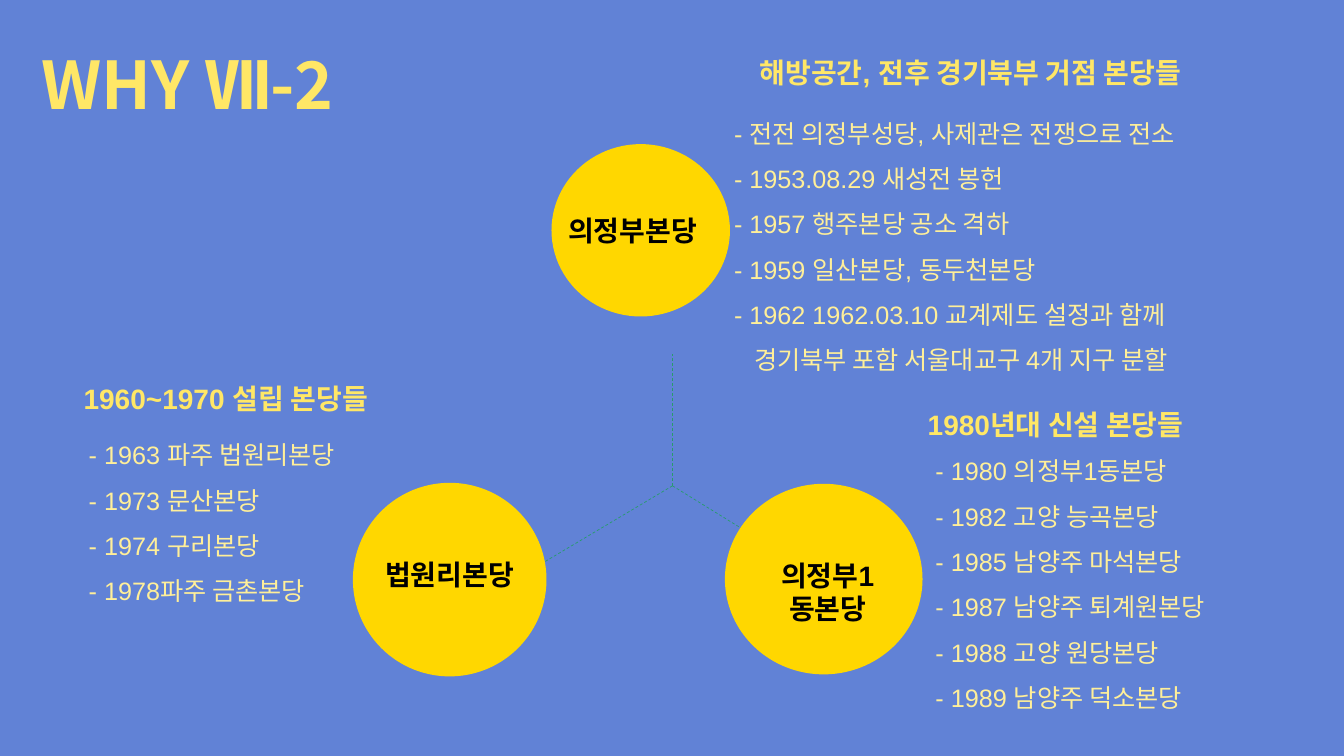
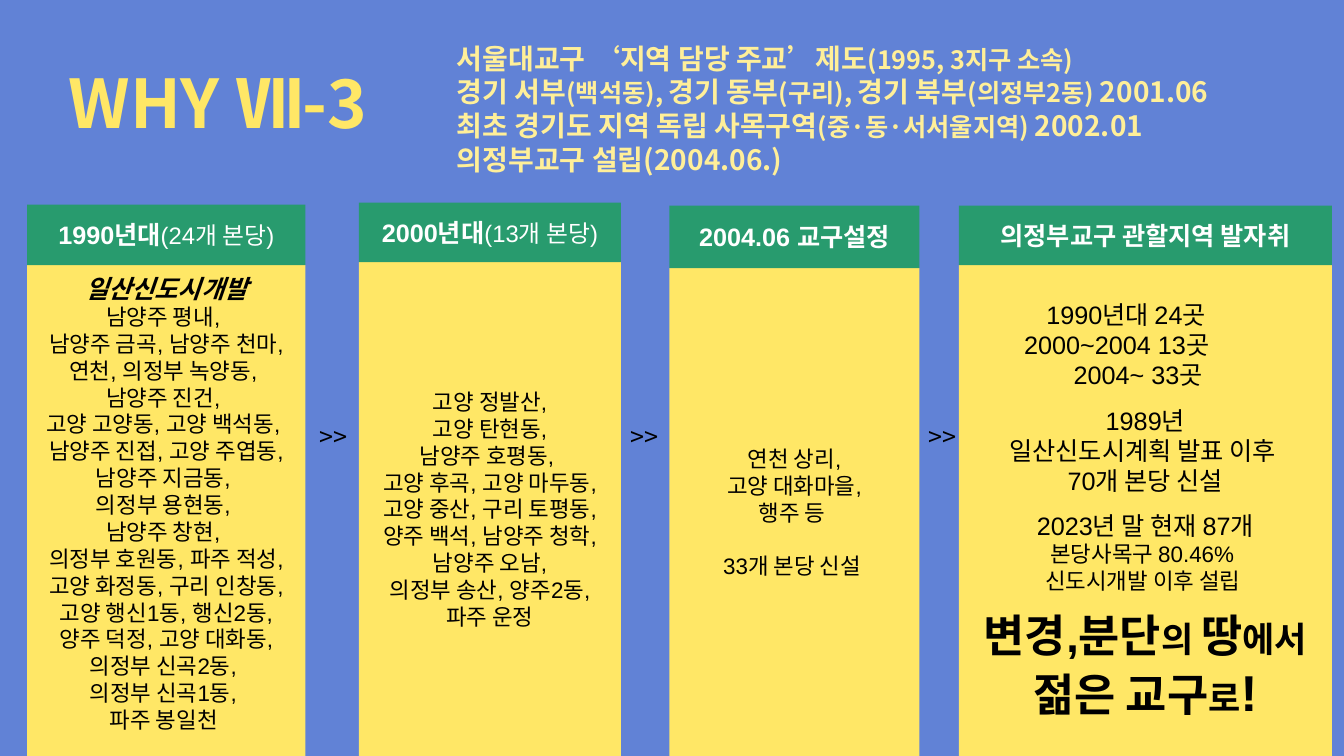
from dataclasses import dataclass
from typing import NamedTuple

from lxml.etree import SubElement
from pptx import Presentation
from pptx.dml.color import RGBColor
from pptx.enum.dml import MSO_LINE
from pptx.enum.shapes import MSO_CONNECTOR, MSO_SHAPE
from pptx.enum.text import MSO_ANCHOR, MSO_AUTO_SIZE, PP_ALIGN
from pptx.oxml.ns import qn
from pptx.util import Inches, Pt

BLUE = RGBColor(0x61, 0x82, 0xD6)
GREEN = RGBColor(0x28, 0x9B, 0x6E)
GOLD = RGBColor(0xFF, 0xD7, 0x00)
YELLOW = RGBColor(0xFF, 0xE7, 0x66)
CREAM = RGBColor(0xFF, 0xEF, 0x99)
BLACK = RGBColor(0, 0, 0)
WHITE = RGBColor(0xFF, 0xFF, 0xFF)
LATIN = "Arial"
KOREAN = "Noto Sans CJK KR"
SLIDE_HEIGHT = 7.5
COMPARISON_LAYOUT = 4
CONTENT_LAYOUT = 1


class Box(NamedTuple):
    left: float
    top: float
    width: float
    height: float

    def lengths(self) -> list:
        return [Inches(value) for value in self]


class Run(NamedTuple):
    text: str
    size: float
    bold: bool = False
    color: RGBColor = BLACK
    font: str = LATIN
    italic: bool = False


@dataclass
class Line:
    runs: list
    align: PP_ALIGN = PP_ALIGN.CENTER
    spacing: float = 1.0
    before: float = 0
    indent: float = 0


@dataclass
class ParishGroup:
    heading: str
    heading_box: Box
    entries: list
    list_box: Box
    first_spacing: float = 1.5
    continuation: str = ""


@dataclass
class ParishCircle:
    box: Box
    label_box: Box
    label: list


@dataclass
class Era:
    left: float
    top: float
    width: float
    band: float
    header: list
    lines: list
    bottom_inset: float = 0.05


def fill_text(shape, lines: list, anchor=MSO_ANCHOR.TOP, bottom: float = 0.05) -> None:
    frame = shape.text_frame
    frame.word_wrap = True
    frame.auto_size = MSO_AUTO_SIZE.NONE
    frame.vertical_anchor = anchor
    frame.margin_left = frame.margin_right = Inches(0.1)
    frame.margin_top, frame.margin_bottom = Inches(0.05), Inches(bottom)
    for index, line in enumerate(lines):
        paragraph = frame.add_paragraph() if index else frame.paragraphs[0]
        paragraph.alignment = line.align
        paragraph.line_spacing = line.spacing
        paragraph.space_before = Pt(line.before)
        paragraph.space_after = Pt(0)
        properties = paragraph._p.get_or_add_pPr()
        properties.set("marL", str(Inches(line.indent)))
        properties.set("indent", "0")
        SubElement(properties, qn("a:buNone"))
        for part in line.runs:
            run = paragraph.add_run()
            run.text = part.text
            font = run.font
            font.size, font.bold, font.italic = Pt(part.size), part.bold, part.italic
            font.color.rgb = part.color
            font.name = part.font
            SubElement(run._r.get_or_add_rPr(), qn("a:ea"), typeface=KOREAN)


def place(shape, box: Box):
    shape.left, shape.top, shape.width, shape.height = box.lengths()
    return shape


def add_text(slide, box: Box, lines: list) -> None:
    fill_text(slide.shapes.add_textbox(*box.lengths()), lines)


def add_block(slide, kind: MSO_SHAPE, box: Box, color: RGBColor):
    block = slide.shapes.add_shape(kind, *box.lengths())
    block.shadow.inherit = False
    block.fill.solid()
    block.fill.fore_color.rgb = color
    block.line.fill.background()
    return block


def add_branch(slide, start: tuple, end: tuple) -> None:
    branch = slide.shapes.add_connector(
        MSO_CONNECTOR.STRAIGHT, *[Inches(value) for value in (*start, *end)])
    branch.line.color.rgb = GREEN
    branch.line.width = Pt(0.5)
    branch.line.dash_style = MSO_LINE.DASH
    SubElement(branch._element.spPr, qn("a:effectLst"))


def start_slide(deck, layout: int, title: str, box: Box, size: float):
    slide = deck.slides.add_slide(deck.slide_layouts[layout])
    slide.background.fill.solid()
    slide.background.fill.fore_color.rgb = BLUE
    fill_text(place(slide.shapes.title, box),
              [Line([Run(title, size, True, YELLOW, KOREAN)], PP_ALIGN.LEFT)])
    return slide


def centered(texts: list, size: float, **style) -> list:
    return [Line([Run(text, size, **style)]) for text in texts]


def group_lines(group: ParishGroup) -> list:
    lines = [Line([Run(entry, 18, color=CREAM)], PP_ALIGN.JUSTIFY, 1.5)
             for entry in group.entries]
    lines[0].spacing = group.first_spacing
    if group.continuation:
        lines.append(Line([Run(group.continuation, 18, color=CREAM)],
                          PP_ALIGN.JUSTIFY, 1.5, indent=0.2))
    return lines


GROUPS = [
    ParishGroup(
        "해방공간, 전후 경기북부 거점 본당들", Box(7.18, 0.5, 4.89, 0.44),
        ["- 전전 의정부성당, 사제관은 전쟁으로 전소", "- 1953.08.29 새성전 봉헌",
         "- 1957 행주본당 공소 격하", "- 1959 일산본당, 동두천본당",
         "- 1962 1962.03.10 교계제도 설정과 함께"],
        Box(7.18, 0.97, 5, 2.77), continuation="경기북부 포함 서울대교구 4개 지구 분할"),
    ParishGroup(
        "1960~1970 설립 본당들", Box(0.63, 3.73, 3.22, 0.44),
        ["- 1963 파주 법원리본당", "- 1973 문산본당", "- 1974 구리본당",
         "- 1978파주 금촌본당"],
        Box(0.78, 4.16, 3.38, 3.23)),
    ParishGroup(
        "1980년대 신설 본당들", Box(8.66, 3.99, 3.62, 0.44),
        ["- 1980 의정부1동본당", "- 1982 고양 능곡본당", "- 1985 남양주 마석본당",
         "- 1987 남양주 퇴계원본당", "- 1988 고양 원당본당", "- 1989 남양주 덕소본당"],
        Box(9.18, 4.47, 3.05, 2.62), first_spacing=1.0),
]

CIRCLES = [
    ParishCircle(Box(3.5, 4.79, 1.92, 1.92), Box(3.57, 5.48, 1.78, 0.43), ["법원리본당"]),
    ParishCircle(Box(5.47, 1.43, 1.77, 1.71), Box(5.35, 2.07, 1.85, 0.43), ["의정부본당"]),
    ParishCircle(Box(7.19, 4.8, 1.96, 1.89), Box(7.21, 5.49, 2, 0.76), ["의정부1", "동본당"]),
]

HUB = (6.67, 4.82)
BRANCH_ENDS = [(6.67, 3.51), (5.24, 5.67), (7.87, 5.56)]

MILESTONES = [
    [("서울대교구 ‘지역 담당 주교’제도", 20), ("(1995, 3지구 소속)", 18)],
    [("경기 서부", 20), ("(백석동), ", 18), ("경기 동부", 20), ("(구리), ", 18),
     ("경기 북부", 20), ("(의정부2동) ", 18), ("2001.06", 20)],
    [("최초 경기도 지역 독립 사목구역", 20), ("(중·동·서서울지역) ", 18), ("2002.01", 20)],
    [("의정부교구 설립(2004.06.)", 20)],
]

ERAS = [
    Era(0.27, 2.03, 2.76, 0.6,
        [Run("1990년대", 18, True, WHITE), Run("(24개 본당)", 17, False, WHITE)],
        [Line([Run("일산신도시개발", 18, True, italic=True)], spacing=1.5)]
        + centered(["남양주 평내, ", "남양주 금곡, 남양주 천마, 연천, 의정부 녹양동, ",
                    "남양주 진건, ", "고양 고양동, 고양 백석동, ",
                    "남양주 진접, 고양 주엽동,남양주 지금동, ", "의정부 용현동, ",
                    "남양주 창현, ",
                    "의정부 호원동, 파주 적성, 고양 화정동, 구리 인창동, 고양 행신1동, "
                    "행신2동, 양주 덕정, 고양 대화동, 의정부 신곡2동, ",
                    "의정부 신곡1동, ", "파주 봉일천 "], 16),
        bottom_inset=0.35),
    Era(3.56, 2.01, 2.6, 0.59,
        [Run("2000년대", 18, True, WHITE), Run("(13개 본당)", 17, False, WHITE)],
        centered(["고양 정발산,", "고양 탄현동,", "남양주 호평동, ",
                  "고양 후곡, 고양 마두동, 고양 중산, 구리 토평동, 양주 백석, "
                  "남양주 청학, 남양주 오남,",
                  "의정부 송산, 양주2동,", "파주 운정"], 16)),
    Era(6.64, 2.04, 2.48, 0.62, [Run("2004.06 교구설정", 18, True, WHITE)],
        centered(["연천 상리,", "고양 대화마을,", "행주 등 "], 16)
        + [Line([Run("33개 본당 신설 ", 16)], before=19)]),
    Era(9.51, 2.04, 3.7, 0.59, [Run("의정부교구 관할지역 발자취", 18, True, WHITE)],
        [Line([Run(text, 18)], PP_ALIGN.LEFT, indent=indent) for text, indent in
         [("1990년대 24곳", 0.77), ("2000~2004 13곳", 0.55), ("2004~ 33곳", 1.04)]]
        + [Line([Run("1989년", 18)], before=11)]
        + centered(["일산신도시계획 발표 이후 ", "70개 본당 신설"], 18)
        + [Line([Run("2023년 말 현재 87개", 18)], before=10)]
        + centered(["본당사목구 80.46% ", "신도시개발 이후 설립 "], 16)
        + [Line([Run("변경,분단", 32, True), Run("의 ", 25, True), Run("땅", 32, True),
                 Run("에서", 25, True)], before=10),
           Line([Run("젊은 교구", 32, True), Run("로", 25, True), Run("!", 36, True)])]),
]

ARROW_LEFTS = [3.07, 6.16, 9.11]


def build_parish_map(deck) -> None:
    slide = start_slide(deck, COMPARISON_LAYOUT, "WHY Ⅶ-2", Box(0.31, 0.38, 3.85, 0.89), 47)
    for end in BRANCH_ENDS:
        add_branch(slide, HUB, end)
    for circle in CIRCLES:
        add_block(slide, MSO_SHAPE.OVAL, circle.box, GOLD)
        add_text(slide, circle.label_box, centered(circle.label, 20, bold=True))
    bodies = [holder for holder in slide.placeholders if holder.placeholder_format.idx]
    for group in GROUPS:
        for box, lines in [
            (group.heading_box, centered([group.heading], 20, bold=True, color=YELLOW)),
            (group.list_box, group_lines(group)),
        ]:
            if bodies:
                fill_text(place(bodies.pop(0), box), lines)
            else:
                add_text(slide, box, lines)


def build_timeline(deck) -> None:
    slide = start_slide(deck, CONTENT_LAYOUT, "WHY Ⅶ-3", Box(0.58, 0.56, 3.74, 0.91), 48)
    fill_text(place(slide.placeholders[1], Box(4.43, 0.36, 8.23, 1.45)),
              [Line([Run(text, size, True, CREAM, KOREAN) for text, size in parts],
                    PP_ALIGN.LEFT) for parts in MILESTONES])
    for era in ERAS:
        body_top = era.top + era.band
        body = add_block(slide, MSO_SHAPE.RECTANGLE,
                         Box(era.left, body_top, era.width, SLIDE_HEIGHT - body_top), YELLOW)
        fill_text(body, era.lines, MSO_ANCHOR.MIDDLE, era.bottom_inset)
        header = add_block(slide, MSO_SHAPE.RECTANGLE,
                           Box(era.left, era.top, era.width, era.band), GREEN)
        fill_text(header, [Line(era.header)], MSO_ANCHOR.MIDDLE)
    for left in ARROW_LEFTS:
        add_text(slide, Box(left, 4.13, 0.51, 0.4),
                 [Line([Run(">>", 18, font=KOREAN)], PP_ALIGN.LEFT)])


def main() -> None:
    deck = Presentation()
    deck.slide_width, deck.slide_height = Inches(13.33), Inches(SLIDE_HEIGHT)
    build_parish_map(deck)
    build_timeline(deck)
    deck.save("out.pptx")


if __name__ == "__main__":
    main()
